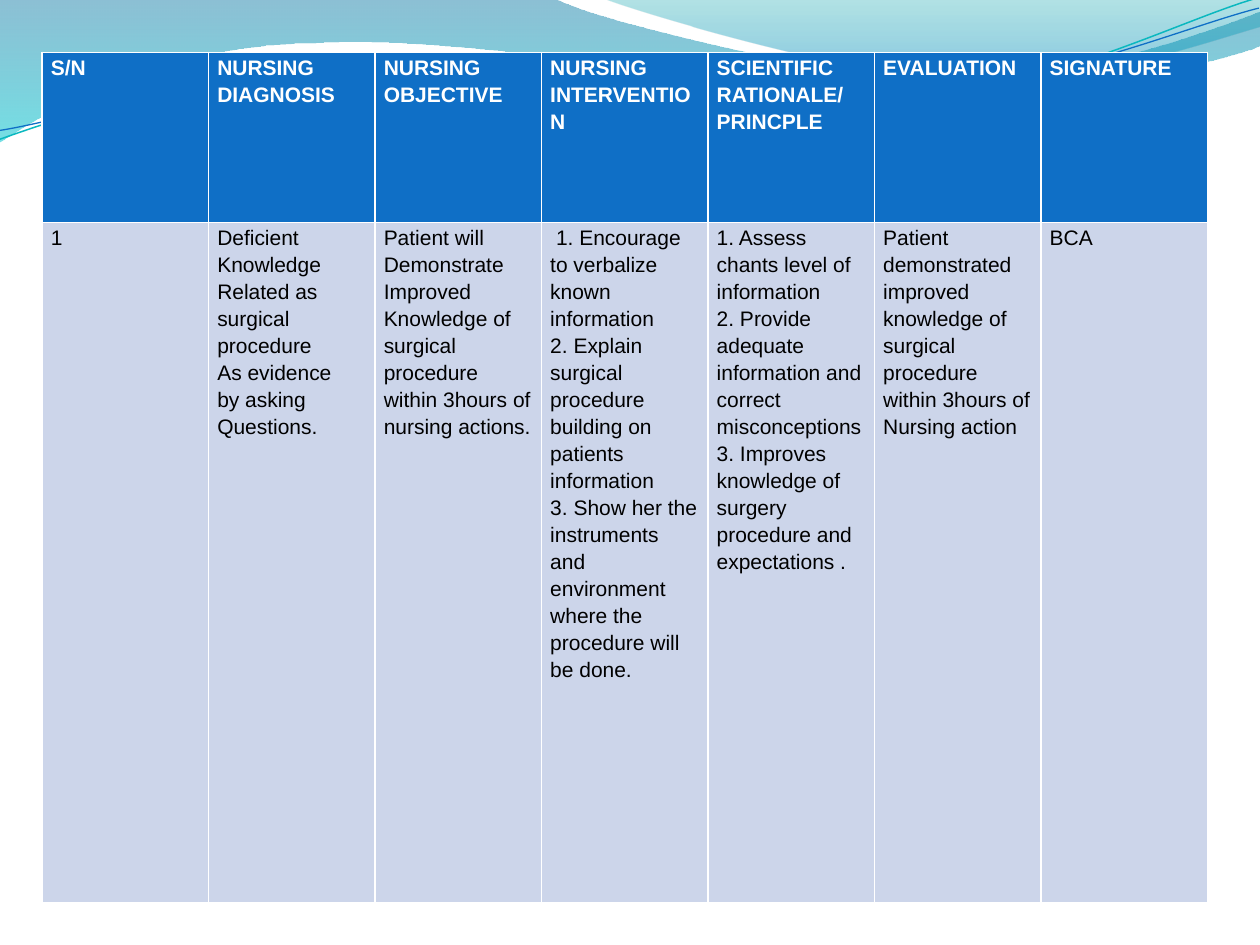
from dataclasses import dataclass

import pptx
import pptx.dml.color
import pptx.oxml
import pptx.oxml.ns
import pptx.util

EMU_PER_PX = 3048  # 300 px to the inch
WAVE_GRID = 3  # px between the grid lines that carry the wave points

Point = tuple[int, int]


@dataclass(frozen=True)
class Theme:
    font: str = "Arial"
    text_size: float = 12
    line_spacing: float = 1.15
    white: str = "FFFFFF"
    black: str = "000000"
    header_fill: str = "0F6FC6"
    body_fill: str = "CCD5EA"


@dataclass(frozen=True)
class GradientStop:
    position: float
    color: str
    opacity: int  # percent


@dataclass(frozen=True)
class Wave:
    """Segments of one point are straight; three points make a Bézier curve."""
    start: Point
    segments: tuple[tuple[Point, ...], ...]
    stops: tuple[GradientStop, ...] = ()
    line_color: str = ""
    line_width: float = 0
    rotation: float = 0


@dataclass(frozen=True)
class Column:
    heading: str
    body: str


THEME = Theme()

WAVES = (
    Wave((0, -1), (
        ((440, -1),),
        ((476, 17), (664, 63), (758, 63)),
        ((853, 63), (958, 26), (1000, 9)),
        ((1001, 36),),
        ((983, 44), (870, 76), (746, 75)),
        ((622, 75), (382, 28), (257, 34)),
        ((129, 35), (46, 83), (-1, 113)),
        ((0, -1),),
    ), stops=(GradientStop(0, "0074A1", 45), GradientStop(1, "00C6CF", 55))),
    Wave((479, -1), (
        ((509, 11), (682, 62), (769, 65)),
        ((856, 69), (961, 32), (1000, 21)),
        ((1000, 0),),
        ((479, -1),),
    ), stops=(GradientStop(0, "00A1A9", 30), GradientStop(0.8, "008BBF", 45))),
    Wave((-2, 87), (
        ((47, 72), (158, 41), (278, 42)),
        ((396, 42), (591, 93), (712, 90)),
        ((832, 87), (940, 36), (1000, 22)),
    ), line_color="0AB8BF", line_width=0.85, rotation=357.3),
    Wave((-2, 80), (
        ((46, 75), (164, 45), (283, 46)),
        ((403, 46), (596, 88), (716, 85)),
        ((835, 83), (942, 42), (1001, 30)),
    ), line_color="0F6FC6", line_width=0.75, rotation=357.3),
)

COLUMNS = (
    Column("S/N", "1"),
    Column("NURSING\nDIAGNOSIS",
           "Deficient\nKnowledge\nRelated as surgical procedure\n"
           "As evidence\nby asking\nQuestions."),
    Column("NURSING OBJECTIVE",
           "Patient will\nDemonstrate\nImproved\nKnowledge of surgical "
           "procedure within 3hours of nursing actions."),
    Column("NURSING INTERVENTION",
           " 1. Encourage to verbalize known information\n"
           "2. Explain surgical procedure building on patients information\n"
           "3. Show her the instruments and environment where the procedure "
           "will be done."),
    Column("SCIENTIFIC\nRATIONALE/ PRINCPLE",
           "1. Assess chants level of information\n"
           "2. Provide adequate information and correct misconceptions\n"
           "3. Improves knowledge of surgery procedure and expectations ."),
    Column("EVALUATION",
           "Patient demonstrated improved knowledge of surgical procedure "
           "within 3hours of Nursing action"),
    Column("SIGNATURE", "BCA"),
)


def px(length: int) -> pptx.util.Emu:
    return pptx.util.Emu(length * EMU_PER_PX)


def rgb(color: str) -> pptx.dml.color.RGBColor:
    return pptx.dml.color.RGBColor.from_string(color)


def bend_segments(shape, segments: tuple[tuple[Point, ...], ...]) -> None:
    """Join each run of three straight steps into one cubic Bézier curve."""
    steps = iter(list(shape._element.iter(pptx.oxml.ns.qn("a:lnTo"))))
    for segment in segments:
        group = [next(steps) for _ in segment]
        if len(group) == 3:
            curve = pptx.oxml.parse_xml(
                f'<a:cubicBezTo {pptx.oxml.ns.nsdecls("a")}/>')
            group[0].addprevious(curve)
            for step in group:
                curve.append(step[0])
                step.getparent().remove(step)


def apply_gradient(shape, stops: tuple[GradientStop, ...]) -> None:
    shape.fill.gradient()
    shape.fill.gradient_angle = 270  # top to bottom
    for gradient_stop, stop in zip(shape.fill.gradient_stops, stops):
        gradient_stop.position = stop.position
        gradient_stop.color.rgb = rgb(stop.color)
    colors = shape._element.spPr.iter(pptx.oxml.ns.qn("a:srgbClr"))
    for color, stop in zip(colors, stops):
        color.append(pptx.oxml.parse_xml(
            f'<a:alpha {pptx.oxml.ns.nsdecls("a")} val="{stop.opacity * 1000}"/>'))


def draw_wave(slide, wave: Wave) -> None:
    points = [point for segment in wave.segments for point in segment]
    builder = slide.shapes.build_freeform(*wave.start, scale=px(WAVE_GRID))
    builder.add_line_segments(points, close=bool(wave.stops))
    shape = builder.convert_to_shape()
    bend_segments(shape, wave.segments)
    shape.shadow.inherit = False
    shape.rotation = wave.rotation
    if wave.stops:
        shape.line.fill.background()
        apply_gradient(shape, wave.stops)
    else:
        shape.fill.background()
        shape.line.color.rgb = rgb(wave.line_color)
        shape.line.width = pptx.util.Pt(wave.line_width)


def fill_cell(cell, text: str, header: bool) -> None:
    cell.margin_left = cell.margin_right = px(21)
    cell.margin_top = cell.margin_bottom = 0
    cell.fill.solid()
    cell.fill.fore_color.rgb = rgb(THEME.header_fill if header else THEME.body_fill)
    cell.text_frame.text = text
    for paragraph in cell.text_frame.paragraphs:
        paragraph.line_spacing = THEME.line_spacing
        for run in paragraph.runs:
            run.font.name = THEME.font
            run.font.size = pptx.util.Pt(THEME.text_size)
            run.font.bold = header
            run.font.color.rgb = rgb(THEME.white if header else THEME.black)


def draw_care_plan(slide) -> None:
    # The table style supplies the white borders, thicker under the header
    frame = slide.shapes.add_table(
        2, len(COLUMNS), px(100), px(125), px(2775), px(2025))
    table = frame.table
    table.rows[0].height = px(405)
    table.rows[1].height = px(1620)
    for index, column in enumerate(COLUMNS):
        fill_cell(table.cell(0, index), column.heading, header=True)
        fill_cell(table.cell(1, index), column.body, header=False)


def main() -> None:
    presentation = pptx.Presentation()
    presentation.slide_width = px(3000)
    presentation.slide_height = px(2250)
    slide = presentation.slides.add_slide(presentation.slide_layouts[6])

    # Decorative waves along the top
    for wave in WAVES:
        draw_wave(slide, wave)

    # Nursing care plan
    draw_care_plan(slide)

    presentation.save("out.pptx")


if __name__ == "__main__":
    main()
